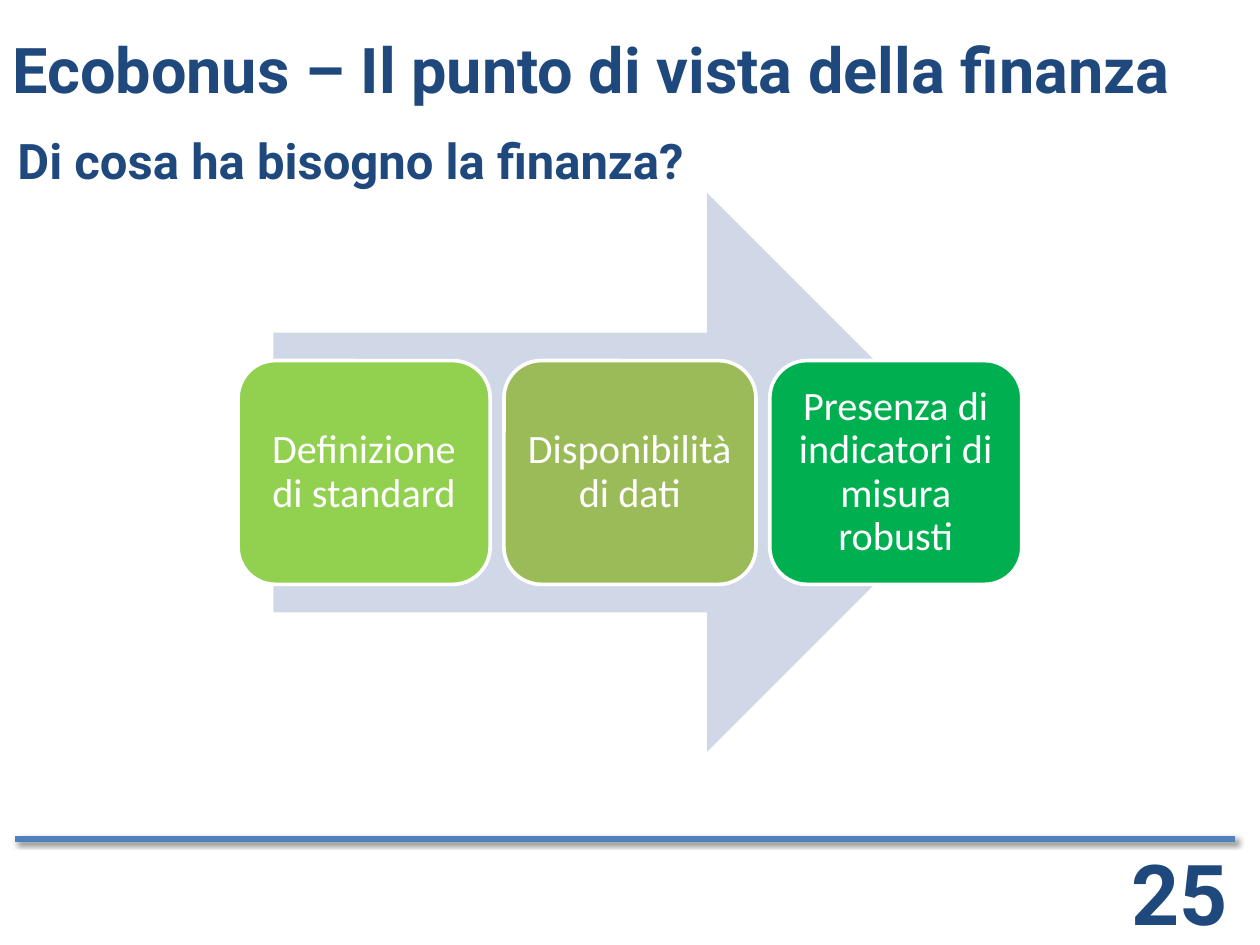
from lxml.etree import fromstring
from pptx import Presentation
from pptx.dml.color import RGBColor
from pptx.enum.shapes import MSO_CONNECTOR, MSO_SHAPE
from pptx.enum.text import MSO_ANCHOR, PP_ALIGN
from pptx.util import Inches, Pt

NAVY = RGBColor(0x1F, 0x49, 0x7D)
BLUE = RGBColor(0x4F, 0x81, 0xBD)
PALE = RGBColor(0xD0, 0xD8, 0xE8)
WHITE = RGBColor(0xFF, 0xFF, 0xFF)
LIME = RGBColor(0x92, 0xD0, 0x50)
OLIVE = RGBColor(0x9B, 0xBB, 0x59)
GREEN = RGBColor(0x00, 0xB0, 0x50)

STEPS = [
    ("Definizione di standard", LIME),
    ("Disponibilità di dati", OLIVE),
    ("Presenza di indicatori di misura robusti", GREEN),
]
SHADOW = """
<a:effectLst xmlns:a="http://schemas.openxmlformats.org/drawingml/2006/main">
  <a:outerShdw blurRad="38100" dist="25400" dir="2700000" rotWithShape="0">
    <a:srgbClr val="000000"><a:alpha val="60000"/></a:srgbClr>
  </a:outerShdw>
</a:effectLst>"""


def write(frame, text, size, face, color, bold=False, align=PP_ALIGN.LEFT):
    frame.word_wrap = True
    para = frame.paragraphs[0]
    para.alignment = align
    run = para.add_run()
    run.text = text
    font = run.font
    font.size, font.name, font.bold = Pt(size), face, bold
    font.color.rgb = color
    return para


def heading(slide, box, text, size, anchor=MSO_ANCHOR.MIDDLE,
            align=PP_ALIGN.LEFT):
    frame = slide.shapes.add_textbox(*map(Inches, box)).text_frame
    frame.vertical_anchor = anchor
    write(frame, text, size, "Roboto", NAVY, True, align)


def solid(slide, kind, box, fill):
    shape = slide.shapes.add_shape(kind, *map(Inches, box))
    shape.shadow.inherit = False
    shape.fill.solid()
    shape.fill.fore_color.rgb = fill
    shape.line.fill.background()
    return shape


def card(slide, box, text, fill):
    shape = solid(slide, MSO_SHAPE.ROUNDED_RECTANGLE, box, fill)
    shape.line.color.rgb = WHITE
    shape.line.width = Pt(2.08)
    frame = shape.text_frame
    frame.vertical_anchor = MSO_ANCHOR.MIDDLE
    frame.margin_left = frame.margin_right = Inches(0.09)
    para = write(frame, text, 23, "Calibri", WHITE, align=PP_ALIGN.CENTER)
    para.line_spacing = 0.9


def process(slide, box, steps):
    """Row of cards, 40% of the box high, over a wide arrow."""
    left, top, width, height = box
    inset = 0.28
    solid(slide, MSO_SHAPE.RIGHT_ARROW,
          (left + inset, top, width - 2 * inset, height), PALE)
    gap = 0.11
    wide = (width - gap * (len(steps) - 1)) / len(steps)
    for i, (text, fill) in enumerate(steps):
        spot = (left + i * (wide + gap), top + 0.3 * height,
                wide, 0.4 * height)
        card(slide, spot, text, fill)


def footer(slide, box, number):
    left, top, width, height = box
    rule = slide.shapes.add_connector(
        MSO_CONNECTOR.STRAIGHT, Inches(left + 0.12), Inches(top),
        Inches(left + width - 0.2), Inches(top))
    rule.line.color.rgb = BLUE
    rule.line.width = Pt(3.5)
    rule._element.spPr.append(fromstring(SHADOW))
    wide = 1.28
    heading(slide, (left + width - wide, top, wide, height), number, 48,
            MSO_ANCHOR.BOTTOM, PP_ALIGN.CENTER)


def main():
    deck = Presentation()
    deck.slide_width, deck.slide_height = Inches(10), Inches(7.5)
    slide = deck.slides.add_slide(deck.slide_layouts[6])
    footer(slide, (0, 6.66, 10, 0.87), "25")
    heading(slide, (0, -0.01, 10, 1.1),
            "Ecobonus – Il punto di vista della finanza", 36)
    heading(slide, (0.04, 0.72, 7.52, 1.1),
            "Di cosa ha bisogno la finanza?", 28)
    process(slide, (1.89, 1.53, 6.22, 4.44), STEPS)
    deck.save("out.pptx")


if __name__ == "__main__":
    main()
